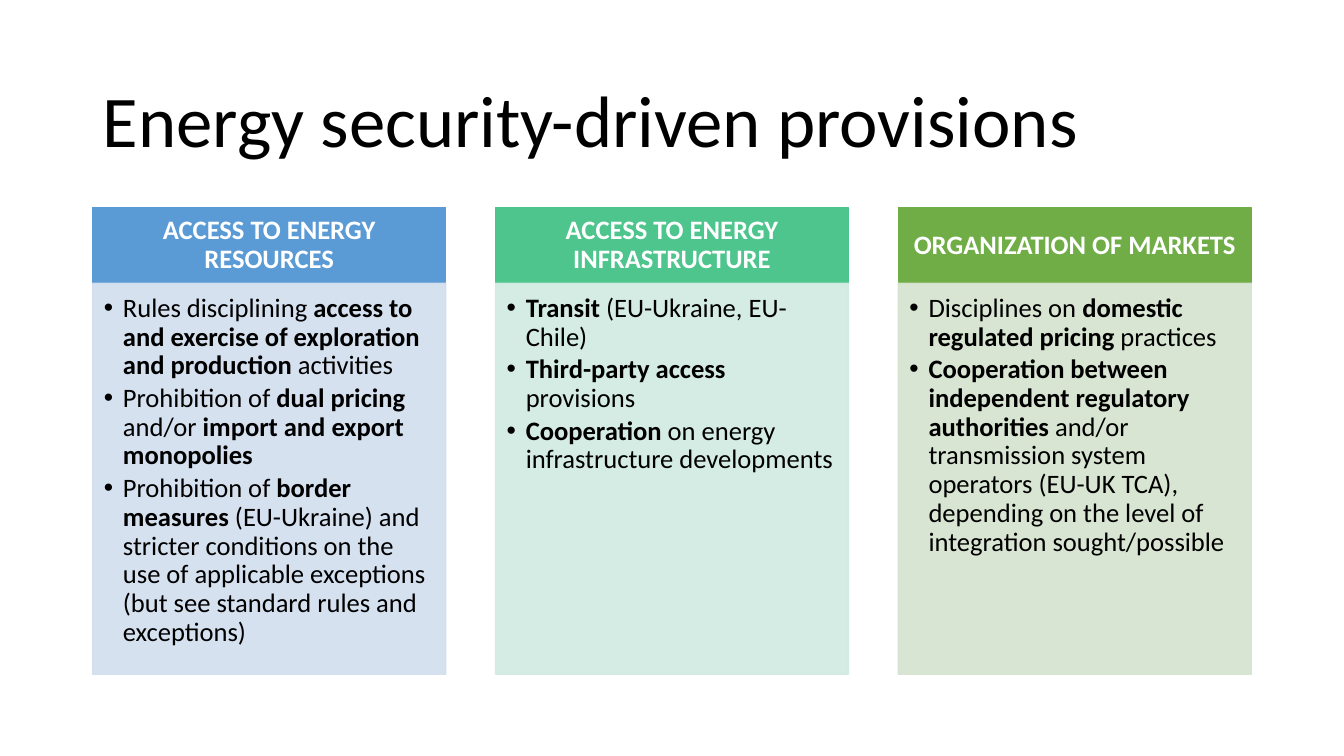
from lxml import etree
from pptx import Presentation
from pptx.dml.color import RGBColor
from pptx.enum import shapes, text
from pptx.oxml import ns
from pptx.util import Inches, Pt

FONT = "Calibri"
COLUMNS = [
    ("ACCESS TO ENERGY RESOURCES", "5B9BD5", "D2DEEF", [
        "Rules disciplining **access to and exercise of exploration and production **activities",
        "Prohibition of **dual pricing **and/or **import and export monopolies",
        "Prohibition of **border measures** (EU-Ukraine) and stricter conditions on the use of "
        "applicable exceptions (but see standard rules and exceptions)",
    ]),
    ("ACCESS TO ENERGY INFRASTRUCTURE", "4DC58D", "D0EAE1", [
        "**Transit** (EU-Ukraine, EU-Chile)",
        "**Third-party access **provisions",
        "**Cooperation** on energy infrastructure developments",
    ]),
    ("ORGANIZATION OF MARKETS", "70AD47", "D5E3CF", [
        "Disciplines on **domestic regulated pricing** practices",
        "**Cooperation between independent regulatory authorities **and/or transmission system "
        "operators (EU-UK TCA), depending on the level of integration sought/possible",
    ]),
]


def color(value):
    """Turn a hex string into a colour."""
    return RGBColor.from_string(value)


def style_paragraph(para, size, ink, bold=None):
    """Set the font and line spacing of a paragraph."""
    para.line_spacing = 0.9
    para.font.name = FONT
    para.font.size = Pt(size)
    para.font.color.rgb = color(ink)
    para.font.bold = bold


def add_bullet(para):
    """Give a paragraph a hanging round bullet."""
    properties = para._p.get_or_add_pPr()
    properties.set("marL", str(Inches(0.19)))
    properties.set("indent", str(-Inches(0.19)))
    etree.SubElement(properties, ns.qn("a:buFont"), typeface="Arial")
    etree.SubElement(properties, ns.qn("a:buChar"), char="•")


def add_panel(page, left, top, width, height, fill, insets, opacity=100):
    """Draw a filled rectangle and return its text frame."""
    box = page.shapes.add_shape(shapes.MSO_SHAPE.RECTANGLE, Inches(left), Inches(top),
                                Inches(width), Inches(height))
    box.shadow.inherit = False
    box.line.width = Pt(1)
    for paint in (box.fill, box.line.fill):
        paint.solid()
        paint.fore_color.rgb = color(fill)
    if opacity < 100:
        for tint in box._element.spPr.iter(ns.qn("a:srgbClr")):
            etree.SubElement(tint, ns.qn("a:alpha"), val=str(opacity * 1000))
    frame = box.text_frame
    frame.word_wrap = True
    (frame.margin_left, frame.margin_top,
     frame.margin_right, frame.margin_bottom) = map(Inches, insets)
    return frame


def add_title(page, left, top, width, height):
    """Place and format the slide title."""
    title = page.shapes.title
    title.left, title.top, title.width, title.height = map(Inches, (left, top, width, height))
    frame = title.text_frame
    frame.text = "Energy security-driven provisions"
    frame.auto_size = text.MSO_AUTO_SIZE.NONE
    frame.vertical_anchor = text.MSO_ANCHOR.MIDDLE
    para = frame.paragraphs[0]
    para.alignment = text.PP_ALIGN.LEFT
    style_paragraph(para, 52, "000000")


def add_column(page, left, top, width, height, heading, accent, tint, points):
    """Draw a heading bar above a panel of bullet points."""
    bar = 0.75
    frame = add_panel(page, left, top, width, bar, accent, (0.15, 0.08, 0.15, 0.08))
    frame.vertical_anchor = text.MSO_ANCHOR.MIDDLE
    frame.text = heading
    para = frame.paragraphs[0]
    para.alignment = text.PP_ALIGN.CENTER
    style_paragraph(para, 19, "FFFFFF", bold=True)

    frame = add_panel(page, left, top + bar, width, height - bar, tint,
                      (0.11, 0.11, 0.15, 0.17), opacity=90)
    frame.vertical_anchor = text.MSO_ANCHOR.TOP
    for index, point in enumerate(points):
        para = frame.add_paragraph() if index else frame.paragraphs[0]
        para.alignment = text.PP_ALIGN.LEFT
        add_bullet(para)
        style_paragraph(para, 19, "000000")
        para.space_after = Pt(2.85)
        for order, words in enumerate(point.split("**")):
            if words:
                span = para.add_run()
                span.text = words
                span.font.bold = order % 2 == 1


def main():
    """Build the slide and save it."""
    deck = Presentation()
    deck.slide_width, deck.slide_height = Inches(13.33), Inches(7.5)
    page = deck.slides.add_slide(deck.slide_layouts.get_by_name("Title Only"))
    add_title(page, 0.92, 0.61, 11.5, 1.24)
    for index, column in enumerate(COLUMNS):
        add_column(page, 0.92 + index * 3.995, 2.06, 3.5, 4.63, *column)
    deck.save("out.pptx")


if __name__ == "__main__":
    main()
